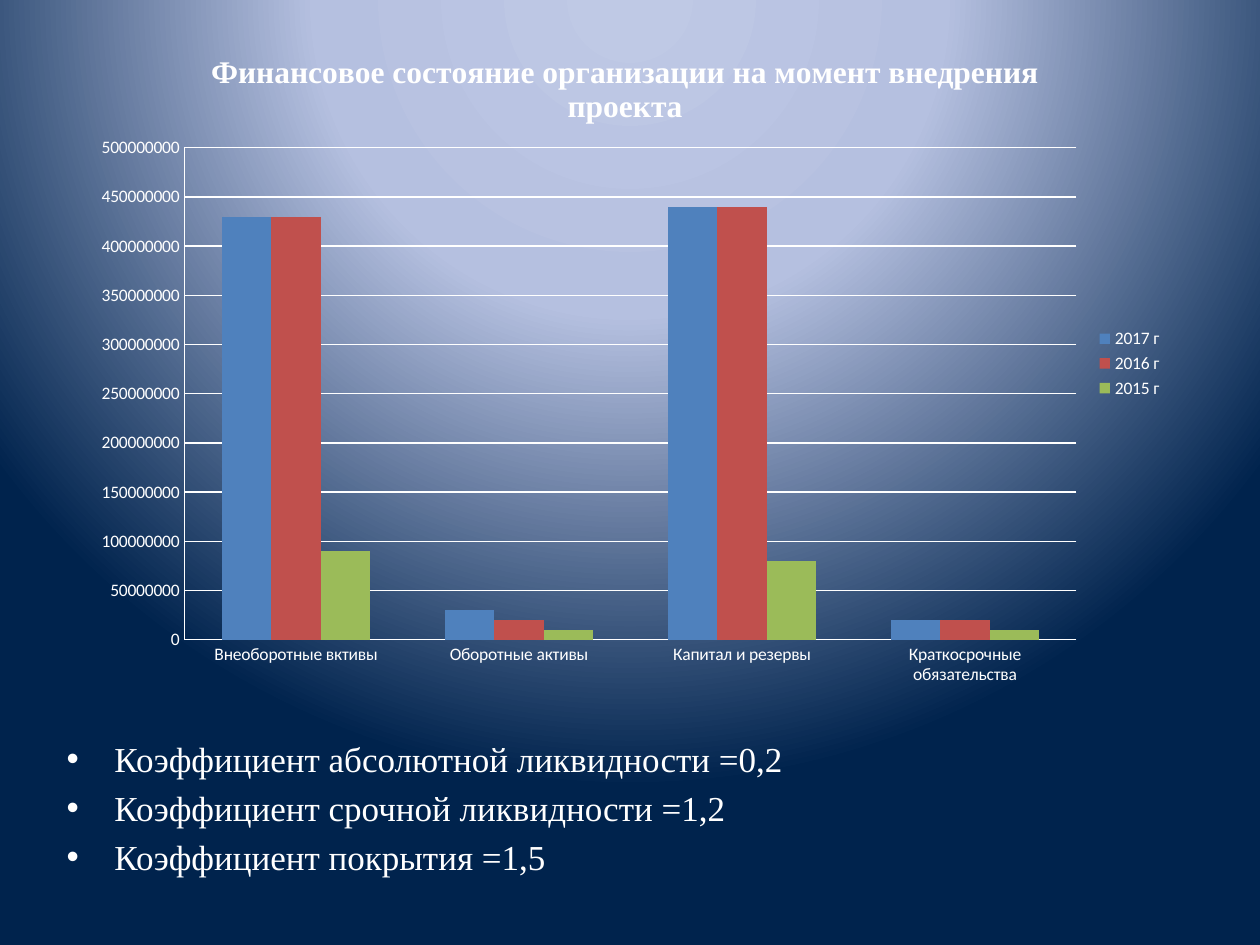
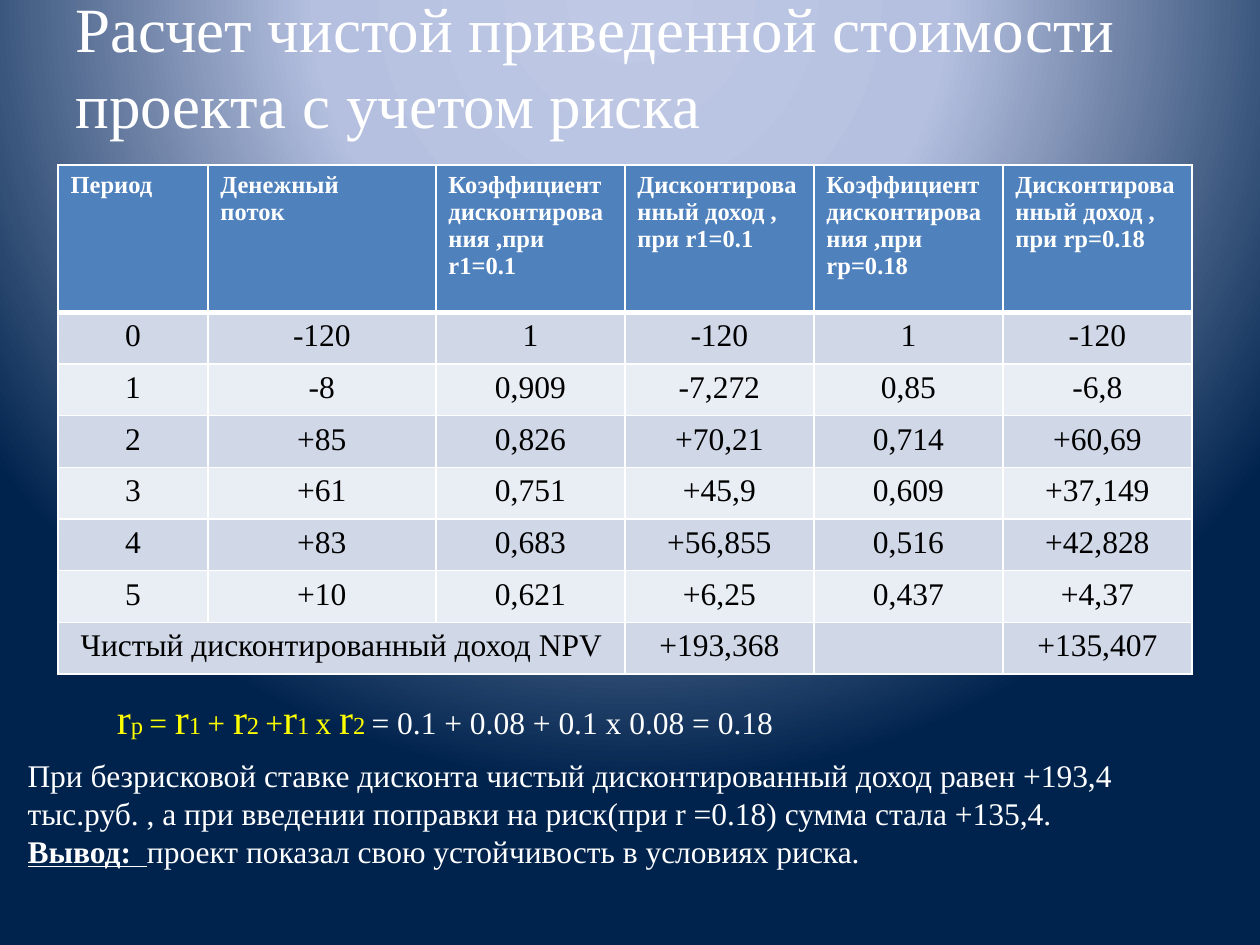
"""Build two slides on the financial state and net present value of a project."""
from pptx import Presentation
from pptx.chart.data import CategoryChartData
from pptx.dml.color import RGBColor
from pptx.enum.chart import XL_CHART_TYPE, XL_LEGEND_POSITION, XL_TICK_MARK
from pptx.enum.text import MSO_ANCHOR, PP_ALIGN
from pptx.oxml import parse_xml
from pptx.oxml.ns import nsdecls
from pptx.util import Inches, Pt

COLORS = {
    "white": "FFFFFF", "black": "000000", "yellow": "FFFF00",
    "blue": "4F81BD", "red": "C0504D", "green": "9BBB59",
    "band_dark": "D0D8E8", "band_light": "E9EDF4",
}
BACKGROUND_STOPS = [(0, "BFC9E5"), (40, "B5C0E0"), (100, "00234D")]
SERIF, SANS = "Times New Roman", "Calibri"

CHART_TITLE = "Финансовое состояние организации на момент внедрения проекта"
CATEGORIES = ["Внеоборотные вктивы", "Оборотные активы", "Капитал и резервы",
              "Краткосрочные обязательства"]
SERIES = [
    ("2017 г", "blue", [430000000, 30000000, 440000000, 20000000]),
    ("2016 г", "red", [430000000, 20000000, 440000000, 20000000]),
    ("2015 г", "green", [90000000, 10000000, 80000000, 10000000]),
]
PLOT_LAYOUT = {"x": 0.1, "y": 0.18, "w": 0.81, "h": 0.73}
RATIOS = [
    "Коэффициент абсолютной ликвидности =0,2",
    "Коэффициент срочной ликвидности =1,2",
    "Коэффициент покрытия =1,5",
]

NPV_TITLE = "Расчет чистой приведенной стоимости проекта с учетом риска"
HEADERS = [
    "Период", "Денежный\nпоток",
    "Коэффициент\nдисконтирования ,при\nr1=0.1",
    "Дисконтированный доход , при r1=0.1",
    "Коэффициент\nдисконтирования ,при\nrр=0.18",
    "Дисконтированный доход , при rр=0.18",
]
PERIODS = [
    ["0", "-120", "1", "-120", "1", "-120"],
    ["1", "-8", "0,909", "-7,272", "0,85", "-6,8"],
    ["2", "+85", "0,826", "+70,21", "0,714", "+60,69"],
    ["3", "+61", "0,751", "+45,9", "0,609", "+37,149"],
    ["4", "+83", "0,683", "+56,855", "0,516", "+42,828"],
    ["5", "+10", "0,621", "+6,25", "0,437", "+4,37"],
]
TOTALS = ["Чистый дисконтированный доход NPV", "", "", "+193,368", "", "+135,407"]
COLUMN_WIDTHS = [1.19, 1.81, 1.5, 1.5, 1.5, 1.5]
HEADER_HEIGHT, ROW_HEIGHT = 1.17, 0.41
FORMULA_TERMS = [("p ", "= "), ("1 ", "+ "), ("2 ", "+"), ("1 ", "x "), ("2 ", "")]
FORMULA_RESULT = "= 0.1 + 0.08 + 0.1 x 0.08 = 0.18"
CONCLUSION = [
    [("При безрисковой ставке дисконта чистый дисконтированный доход равен +193,4 "
      "тыс.руб. , а при введении поправки на риск(при r =0.18) сумма стала +135,4.", {})],
    [("Вывод:  ", {"bold": True, "underline": True}),
     ("проект показал свою устойчивость в условиях риска.", {})],
]


def rgb(color):
    return RGBColor.from_string(COLORS[color])


def set_font(font, size, color="white", name=SERIF, **formats):
    values = {"size": Pt(size), "name": name, **formats}
    for attribute, value in values.items():
        setattr(font, attribute, value)
    font.color.rgb = rgb(color)


def set_background(master):
    stops = "".join(f'<a:gs pos="{position * 1000}"><a:srgbClr val="{color}"/></a:gs>'
                    for position, color in BACKGROUND_STOPS)
    background = parse_xml(
        f'<p:bg {nsdecls("p", "a")}><p:bgPr>'
        f'<a:gradFill rotWithShape="1"><a:gsLst>{stops}</a:gsLst>'
        '<a:path path="circle"><a:fillToRect l="50000" t="-80000" r="50000" b="180000"/>'
        '</a:path></a:gradFill><a:effectLst/></p:bgPr></p:bg>')
    slide_data = master.element.find("{*}cSld")
    for previous in slide_data.findall("{*}bg"):
        slide_data.remove(previous)
    slide_data.insert(0, background)


def add_text(slide, place, paragraphs, size, anchor=MSO_ANCHOR.TOP):
    """Add a text box whose paragraphs are lists of (text, formats) runs."""
    shape = slide.shapes.add_textbox(*map(Inches, place))
    frame = shape.text_frame
    frame.word_wrap = True
    frame.vertical_anchor = anchor
    for index, runs in enumerate(paragraphs):
        paragraph = frame.paragraphs[0] if index == 0 else frame.add_paragraph()
        for text, formats in runs:
            run = paragraph.add_run()
            run.text = text
            set_font(run.font, **{"size": size, **formats})
    return frame


def add_bullets(slide, place, lines, size):
    frame = add_text(slide, place, [[(line, {})] for line in lines], size)
    for paragraph in frame.paragraphs:
        paragraph.space_before = Pt(size * 0.2)
        properties = paragraph._p.get_or_add_pPr()
        properties.set("marL", str(Inches(0.38)))
        properties.set("indent", str(-Inches(0.38)))
        for tag, value in (("buFont", 'typeface="Arial"'), ("buChar", 'char="•"')):
            properties.append(parse_xml(f'<a:{tag} {nsdecls("a")} {value}/>'))


def set_plot_layout(chart):
    plot_area = chart.element.find("{*}chart/{*}plotArea")
    for layout in plot_area.findall("{*}layout"):
        plot_area.remove(layout)
    modes = '<c:xMode val="edge"/><c:yMode val="edge"/>'
    sizes = "".join(f'<c:{key} val="{value}"/>' for key, value in PLOT_LAYOUT.items())
    plot_area.insert(0, parse_xml(
        f'<c:layout {nsdecls("c")}><c:manualLayout><c:layoutTarget val="inner"/>'
        f'{modes}{sizes}</c:manualLayout></c:layout>'))


def add_balance_chart(slide, place):
    data = CategoryChartData(number_format="General")
    data.categories = CATEGORIES
    for name, _, values in SERIES:
        data.add_series(name, values)
    chart = slide.shapes.add_chart(
        XL_CHART_TYPE.COLUMN_CLUSTERED, *map(Inches, place), data).chart
    set_font(chart.font, 10, name=SANS)
    chart.has_title = True
    chart.chart_title.text_frame.text = CHART_TITLE
    title_run = chart.chart_title.text_frame.paragraphs[0].runs[0]
    set_font(title_run.font, 18, bold=True)
    chart.has_legend = True
    chart.legend.position = XL_LEGEND_POSITION.RIGHT
    chart.legend.include_in_layout = False
    plot = chart.plots[0]
    plot.gap_width, plot.overlap, plot.vary_by_categories = 150, 0, False
    for series, (_, color, _) in zip(plot.series, SERIES):
        series.format.fill.solid()
        series.format.fill.fore_color.rgb = rgb(color)
    value_axis = chart.value_axis
    value_axis.maximum_scale, value_axis.minimum_scale = 500000000, 0
    value_axis.major_unit = 50000000
    value_axis.has_major_gridlines = True
    for axis in (value_axis, chart.category_axis):
        axis.major_tick_mark = axis.minor_tick_mark = XL_TICK_MARK.NONE
    for part in (value_axis, chart.category_axis, value_axis.major_gridlines):
        part.format.line.color.rgb = rgb("white")
        part.format.line.width = Pt(0.75)
    set_plot_layout(chart)


def set_cell(cell, text, fill, bottom, alignment, **formats):
    properties = cell._tc.get_or_add_tcPr()
    for side, width in (("L", 1), ("R", 1), ("T", 1), ("B", bottom)):
        properties.append(parse_xml(
            f'<a:ln{side} {nsdecls("a")} w="{int(Pt(width))}"><a:solidFill>'
            f'<a:srgbClr val="{COLORS["white"]}"/></a:solidFill></a:ln{side}>'))
    cell.fill.solid()
    cell.fill.fore_color.rgb = rgb(fill)
    cell.text = text
    for paragraph in cell.text_frame.paragraphs:
        paragraph.alignment = alignment
        for run in paragraph.runs:
            set_font(run.font, **formats)


def add_npv_table(slide, left, top):
    rows = [HEADERS, *PERIODS, TOTALS]
    heights = [HEADER_HEIGHT] + [ROW_HEIGHT] * (len(rows) - 1)
    size = (sum(COLUMN_WIDTHS), sum(heights))
    table = slide.shapes.add_table(
        len(rows), len(HEADERS), *map(Inches, (left, top, *size))).table
    for column, width in zip(table.columns, COLUMN_WIDTHS):
        column.width = Inches(width)
    header_style = {"fill": "blue", "bottom": 3, "alignment": PP_ALIGN.LEFT,
                    "size": 14, "color": "white", "bold": True}
    body_style = {"bottom": 1, "alignment": PP_ALIGN.CENTER,
                  "size": 18, "color": "black", "bold": False}
    for row_index, (texts, height) in enumerate(zip(rows, heights)):
        table.rows[row_index].height = Inches(height)
        band = "band_dark" if row_index % 2 else "band_light"
        style = {"fill": band, **body_style} if row_index else header_style
        for column_index, text in enumerate(texts):
            set_cell(table.cell(row_index, column_index), text, **style)
    last = len(rows) - 1
    table.cell(last, 0).merge(table.cell(last, 2))


def formula_runs():
    runs = []
    for index, sign in FORMULA_TERMS:
        parts = (("r", 24), (index, 14), (sign, 18))
        runs += [(text, {"size": size, "color": "yellow"}) for text, size in parts if text]
    return runs + [(FORMULA_RESULT, {})]


def build_financial_state(slide):
    add_bullets(slide, (0.43, 5.8, 9, 1.42), RATIOS, 20)
    add_balance_chart(slide, (0.59, 0.21, 8.74, 5.35))


def build_net_present_value(slide):
    add_text(slide, (0.5, 0.05, 9, 0.94), [[(NPV_TITLE, {})]], 36, MSO_ANCHOR.MIDDLE)
    add_npv_table(slide, 0.46, 1.31)
    add_text(slide, (0.12, 5.95, 9.69, 1.31), CONCLUSION, 18)
    add_text(slide, (0.83, 5.45, 6.46, 0.5), [formula_runs()], 18)


def main():
    presentation = Presentation()
    presentation.slide_width, presentation.slide_height = Inches(10), Inches(7.5)
    set_background(presentation.slide_master)
    for build in (build_financial_state, build_net_present_value):
        build(presentation.slides.add_slide(presentation.slide_layouts[6]))
    presentation.save("out.pptx")


if __name__ == "__main__":
    main()
